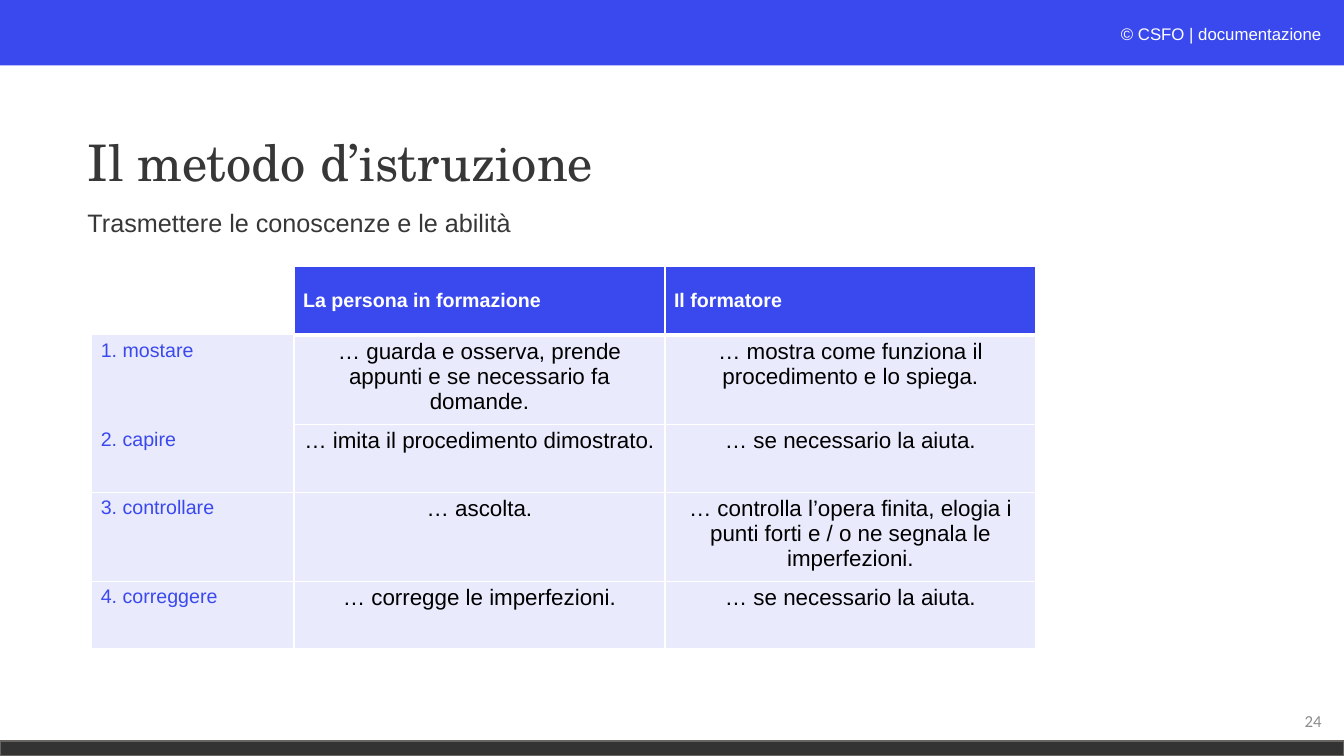
import dataclasses

import lxml.etree
import pptx
import pptx.dml.color
import pptx.enum.shapes
import pptx.enum.text
import pptx.oxml.ns
import pptx.util

Pt = pptx.util.Pt
ALIGN = pptx.enum.text.PP_ALIGN
ANCHOR = pptx.enum.text.MSO_ANCHOR


@dataclasses.dataclass(frozen=True)
class Theme:
    blue: str = "3A49EE"
    pale: str = "E9EAFC"
    dark: str = "333333"
    edge: str = "666360"
    ink: str = "373737"
    grey: str = "8C8C8C"
    white: str = "FFFFFF"
    black: str = "000000"
    body_font: str = "Arial"
    title_font: str = "TeX Gyre Schola"
    number_font: str = "Calibri"
    title_size: int = 36
    subtitle_size: int = 18
    cell_size: int = 16
    label_size: int = 14
    small_size: int = 12


def rgb(value):
    return pptx.dml.color.RGBColor.from_string(value)


def write(frame, text, *, font, size, color, bold=False, align=ALIGN.LEFT,
          anchor=ANCHOR.TOP, spacing=1.0):
    """Fill a text frame, one paragraph for each line of text."""
    frame.word_wrap = True
    frame.vertical_anchor = anchor
    for index, line in enumerate(text.split("\n")):
        para = frame.paragraphs[0] if index == 0 else frame.add_paragraph()
        para.alignment = align
        para.line_spacing = spacing
        span = para.add_run()
        span.text = line
        span.font.name = font
        span.font.size = Pt(size)
        span.font.bold = bold
        span.font.color.rgb = rgb(color)


class SlideBuilder:
    def __init__(self, page, theme):
        self.page = page
        self.theme = theme

    def bar(self, left, top, width, height, fill, line=None):
        box = self.page.shapes.add_shape(
            pptx.enum.shapes.MSO_SHAPE.RECTANGLE,
            Pt(left), Pt(top), Pt(width), Pt(height))
        box.shadow.inherit = False
        box.fill.solid()
        box.fill.fore_color.rgb = rgb(fill)
        if line:
            box.line.color.rgb = rgb(line)
            box.line.width = Pt(1)
        else:
            box.line.fill.background()

    def title(self, left, top, width, height, text):
        box = self.page.shapes.title
        box.left, box.top, box.width, box.height = map(Pt, (left, top, width, height))
        write(box.text_frame, text, font=self.theme.title_font,
              size=self.theme.title_size, color=self.theme.ink,
              anchor=ANCHOR.MIDDLE, spacing=0.9)

    def text(self, left, top, width, height, text, **style):
        box = self.page.shapes.add_textbox(Pt(left), Pt(top), Pt(width), Pt(height))
        write(box.text_frame, text, **style)
        return box

    def border(self, cell, side, width):
        """Draw a white cell edge; a width of 0 hides the edge."""
        edge = lxml.etree.SubElement(
            cell._tc.get_or_add_tcPr(), pptx.oxml.ns.qn("a:ln" + side), w=str(Pt(width)))
        if not width:
            lxml.etree.SubElement(edge, pptx.oxml.ns.qn("a:noFill"))
            return
        fill = lxml.etree.SubElement(edge, pptx.oxml.ns.qn("a:solidFill"))
        lxml.etree.SubElement(fill, pptx.oxml.ns.qn("a:srgbClr"), val=self.theme.white)

    def edge_width(self, row, column):
        """Width of the line above a row: heavy below the header, none in the first label pair."""
        if column == 0 and row <= 2:
            return 0
        return 3 if row == 1 else 1

    def cell_style(self, row, column):
        theme = self.theme
        if row == 0:
            return dict(size=theme.label_size, color=theme.white, bold=True,
                        anchor=ANCHOR.MIDDLE)
        if column == 0:
            return dict(size=theme.label_size, color=theme.blue)
        return dict(size=theme.cell_size, color=theme.black, align=ALIGN.CENTER)

    def table(self, left, top, widths, heights, rows):
        frame = self.page.shapes.add_table(
            len(rows), len(widths), Pt(left), Pt(top), Pt(sum(widths)), Pt(sum(heights)))
        grid = frame.table
        grid.horz_banding = False
        for column, width in zip(grid.columns, widths):
            column.width = Pt(width)
        for row, height in zip(grid.rows, heights):
            row.height = Pt(height)
        for row, texts in enumerate(rows):
            for column, text in enumerate(texts):
                cell = grid.cell(row, column)
                cell.margin_left = cell.margin_right = Pt(6.5)
                cell.margin_top = cell.margin_bottom = Pt(3)
                for side, width in (("L", 1), ("R", 1),
                                    ("T", self.edge_width(row, column)),
                                    ("B", self.edge_width(row + 1, column))):
                    self.border(cell, side, width)
                if not text:
                    cell.fill.background()
                    continue
                cell.fill.solid()
                cell.fill.fore_color.rgb = rgb(
                    self.theme.pale if row else self.theme.blue)
                style = self.cell_style(row, column)
                cell.vertical_anchor = style.pop("anchor", ANCHOR.TOP)
                write_cell(cell, text, font=self.theme.body_font, **style)


def write_cell(cell, text, **style):
    anchor = cell.vertical_anchor
    write(cell.text_frame, text, **style)
    cell.vertical_anchor = anchor


def main():
    theme = Theme()
    deck = pptx.Presentation()
    deck.slide_width, deck.slide_height = Pt(960), Pt(540)
    slide = SlideBuilder(deck.slides.add_slide(deck.slide_layouts[5]), theme)

    slide.bar(0, 0, 960, 46.8, theme.blue)
    slide.bar(0, 529.2, 960, 10.8, theme.dark, line=theme.edge)
    credit = slide.text(620.6, 13.7, 330.5, 21.6, "© CSFO | documentazione",
                        font=theme.body_font, size=theme.small_size,
                        color=theme.white, align=ALIGN.RIGHT)
    credit.text_frame.auto_size = pptx.enum.text.MSO_AUTO_SIZE.SHAPE_TO_FIT_TEXT
    slide.title(55.4, 65.5, 635, 104.4, "Il metodo d’istruzione")
    slide.text(55.4, 146.9, 634.3, 38.9, "Trasmettere le conoscenze e le abilità",
               font=theme.body_font, size=theme.subtitle_size, color=theme.ink,
               spacing=0.9)
    slide.table(65.5, 190, [144.5, 265, 265], [49.5, 59.5, 48.5, 59.5, 48.5], [
        ["", "La persona in formazione", "Il formatore"],
        ["1. mostare", "… guarda e osserva, prende appunti e se necessario fa domande.",
         "… mostra come funziona il\nprocedimento e lo spiega."],
        ["2. capire", "… imita il procedimento dimostrato.", "… se necessario la aiuta."],
        ["3. controllare", "… ascolta.",
         "… controlla l’opera finita, elogia i punti forti e / o ne segnala le imperfezioni."],
        ["4. correggere", "… corregge le imperfezioni.", "… se necessario la aiuta."],
    ])
    slide.text(735.1, 500.4, 216, 28.8, "24", font=theme.number_font,
               size=theme.small_size, color=theme.grey, align=ALIGN.RIGHT,
               anchor=ANCHOR.MIDDLE)
    deck.save("out.pptx")


if __name__ == "__main__":
    main()
